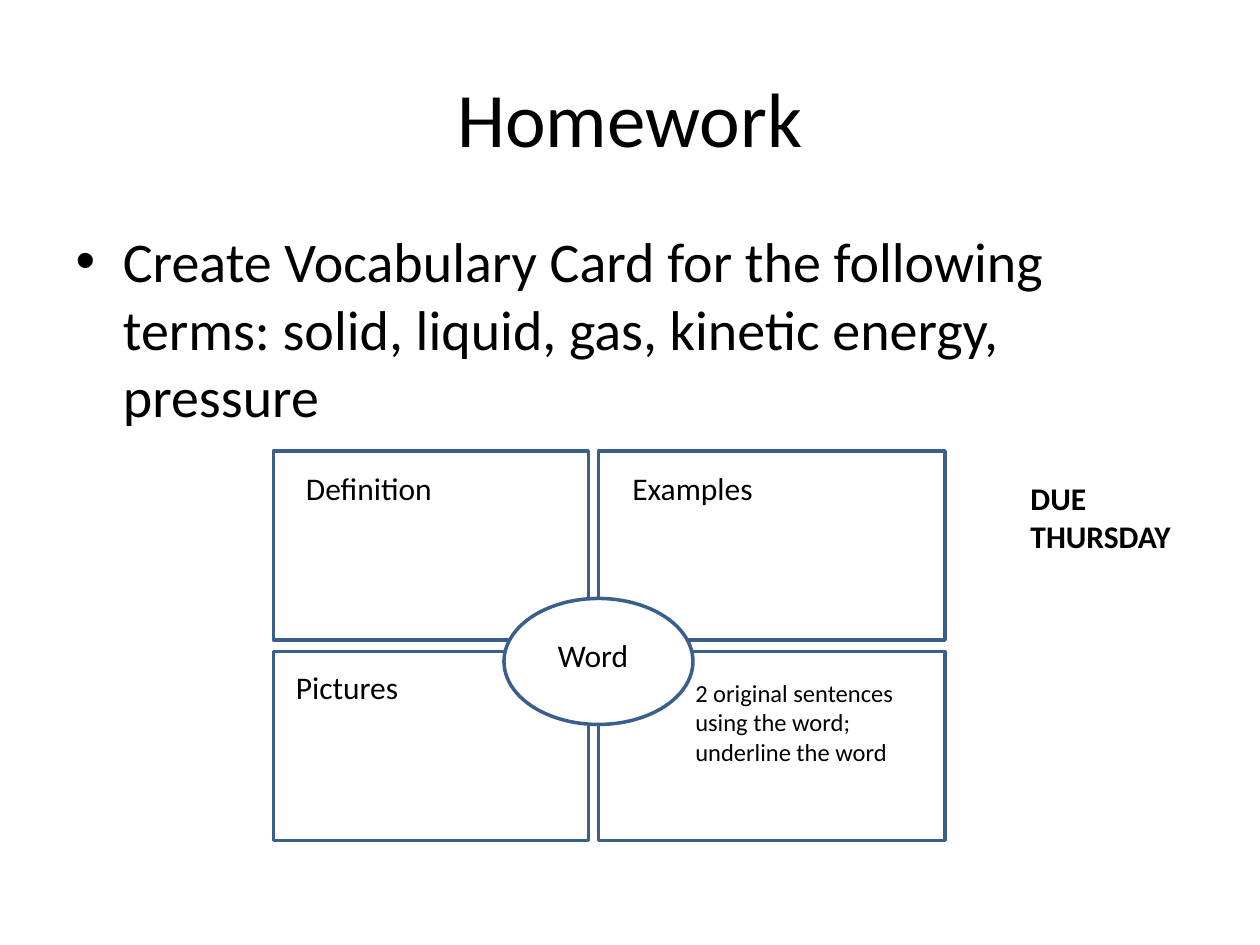
from itertools import product

from pptx import Presentation
from pptx.dml.color import RGBColor
from pptx.enum.shapes import MSO_SHAPE
from pptx.enum.text import MSO_ANCHOR, MSO_AUTO_SIZE, PP_ALIGN
from pptx.util import Inches, Pt

COLORS = {"text": "000000", "card": "FFFFFF", "outline": "3A5F8C"}
FONT = "Calibri"

TITLE = "Homework"
TASK = ("Create Vocabulary Card for the following terms: "
        "solid, liquid, gas, kinetic energy, pressure")

# Card grid: (start, length) of each column and row
COLUMNS = [(2.17, 2.5), (4.75, 2.75)]
ROWS = [(3.58, 1.5), (5.17, 1.5)]
WORD_OVAL = (4, 4.75, 1.5, 1)

# Text, (left, top, width, height), size, bold
LABELS = [
    ("Definition", (2.33, 3.67, 1.5, 0.4), 18, False),
    ("Word", (4.33, 5, 1, 0.4), 18, False),
    ("Examples", (4.92, 3.67, 1.33, 0.4), 18, False),
    ("Pictures", (2.25, 5.25, 1.17, 0.4), 18, False),
    ("2 original sentences using the word; underline the word",
     (5.42, 5.33, 1.83, 0.81), 14, False),
    ("DUE THURSDAY", (8.08, 3.75, 1.42, 0.71), 18, True),
]


def color(name):
    return RGBColor.from_string(COLORS[name])


def write(shape, text, size, bold=False):
    shape.text_frame.text = text
    shape.text_frame.word_wrap = True
    font = shape.text_frame.paragraphs[0].runs[0].font
    font.name, font.size, font.bold = FONT, Pt(size), bold
    font.color.rgb = color("text")


def place(shape, left, top, width, height):
    shape.left, shape.top = Inches(left), Inches(top)
    shape.width, shape.height = Inches(width), Inches(height)


def add_outlined(page, kind, bounds):
    shape = page.shapes.add_shape(kind, *map(Inches, bounds))
    shape.shadow.inherit = False
    shape.fill.solid()
    shape.fill.fore_color.rgb = color("card")
    shape.line.color.rgb = color("outline")
    shape.line.width = Pt(2)


def add_label(page, text, bounds, size, bold):
    box = page.shapes.add_textbox(*map(Inches, bounds))
    write(box, text, size, bold)
    box.text_frame.auto_size = MSO_AUTO_SIZE.SHAPE_TO_FIT_TEXT


def main():
    deck = Presentation()
    deck.slide_width, deck.slide_height = Inches(10), Inches(7.5)
    page = deck.slides.add_slide(deck.slide_layouts.get_by_name("Title and Content"))

    title, body = page.shapes.title, page.placeholders[1]
    place(title, 0.5, 0.3, 9, 1.25)
    write(title, TITLE, 44)
    title.text_frame.vertical_anchor = MSO_ANCHOR.MIDDLE
    title.text_frame.paragraphs[0].alignment = PP_ALIGN.CENTER
    place(body, 0.5, 1.75, 9, 1.75)
    write(body, TASK, 32)

    for (top, height), (left, width) in product(ROWS, COLUMNS):
        add_outlined(page, MSO_SHAPE.RECTANGLE, (left, top, width, height))
    add_outlined(page, MSO_SHAPE.OVAL, WORD_OVAL)
    for label in LABELS:
        add_label(page, *label)

    deck.save("out.pptx")


if __name__ == "__main__":
    main()
